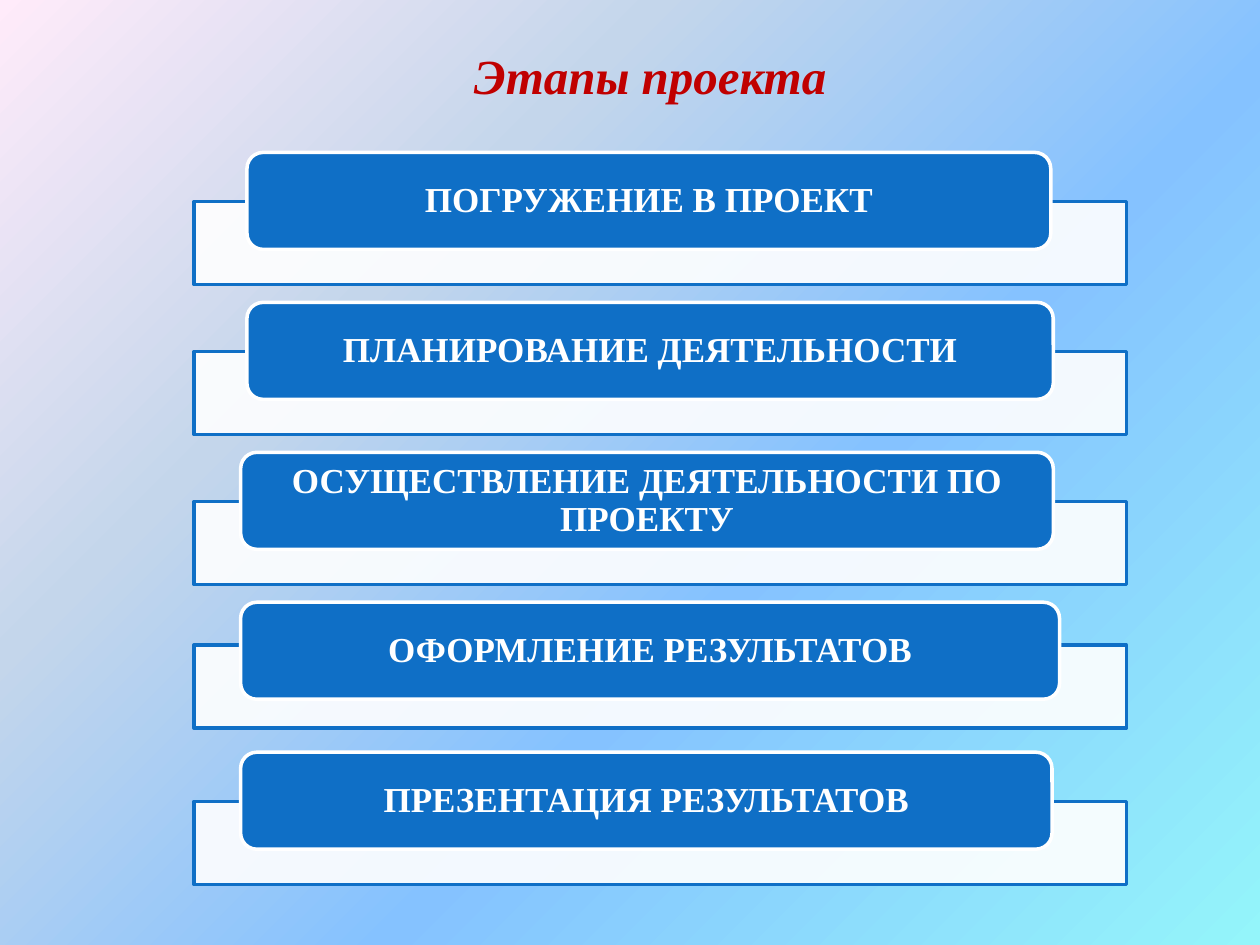
"""Build the slide that lists the five stages of a project."""
import pptx
import pptx.dml.color
import pptx.enum.shapes
import pptx.enum.text
import pptx.oxml
import pptx.oxml.ns
import pptx.util
from pptx.util import Inches

SHAPE = pptx.enum.shapes.MSO_SHAPE
ANCHOR = pptx.enum.text.MSO_ANCHOR


def rgb(value):
    return pptx.dml.color.RGBColor.from_string(value)


class Deck:
    font = "Times New Roman"
    blue = "0F6FC6"
    white = "FFFFFF"
    red = "C00000"

    def __init__(self):
        self.prs = pptx.Presentation()
        self.prs.slide_width = Inches(10)
        self.prs.slide_height = Inches(7.5)
        self.s = self.prs.slides.add_slide(self.prs.slide_layouts[5])

    def background(self, stops):
        fill = self.s.background.fill
        fill.gradient()
        grad = self.s._element.find(".//" + pptx.oxml.ns.qn("a:gradFill"))
        marks = "".join(
            f'<a:gs pos="{pos * 1000}"><a:srgbClr val="{color}"/></a:gs>'
            for pos, color in stops
        )
        new = pptx.oxml.parse_xml(
            f'<a:gradFill {pptx.oxml.ns.nsdecls("a")} rotWithShape="1">'
            f'<a:gsLst>{marks}</a:gsLst><a:path path="circle">'
            '<a:fillToRect l="100000" t="100000"/></a:path></a:gradFill>'
        )
        grad.getparent().replace(grad, new)

    def text(self, tf, text, size, color, anchor, inset, italic=None):
        tf.word_wrap = True
        tf.vertical_anchor = anchor
        tf.margin_left = tf.margin_right = Inches(inset)
        p = tf.paragraphs[0]
        p.alignment = pptx.enum.text.PP_ALIGN.CENTER
        r = p.add_run()
        r.text = text
        r.font.name = self.font
        r.font.size = pptx.util.Pt(size)
        r.font.bold = True
        r.font.italic = italic
        r.font.color.rgb = rgb(color)
        return p

    def title(self, text, left, top, width, height):
        sp = self.s.shapes.title
        sp.left, sp.top = Inches(left), Inches(top)
        sp.width, sp.height = Inches(width), Inches(height)
        self.text(sp.text_frame, text, 28, self.red, ANCHOR.TOP, 0.1, True)
        sp.text_frame.auto_size = pptx.enum.text.MSO_AUTO_SIZE.SHAPE_TO_FIT_TEXT

    def box(self, kind, left, top, width, height, fill, line):
        sp = self.s.shapes.add_shape(
            kind, Inches(left), Inches(top), Inches(width), Inches(height))
        sp.shadow.inherit = False
        sp.fill.solid()
        sp.fill.fore_color.rgb = rgb(fill)
        sp.line.color.rgb = rgb(line)
        sp.line.width = pptx.util.Pt(2)
        return sp

    def frame(self, top):
        sp = self.box(SHAPE.RECTANGLE, 1.54, top, 7.4, 0.66, self.white, self.blue)
        color = sp._element.spPr.find(
            pptx.oxml.ns.qn("a:solidFill")).find(pptx.oxml.ns.qn("a:srgbClr"))
        color.append(pptx.oxml.parse_xml(
            f'<a:alpha {pptx.oxml.ns.nsdecls("a")} val="90000"/>'))

    def label(self, text, left, top, width):
        sp = self.box(SHAPE.ROUNDED_RECTANGLE, left, top, width, 0.77,
                      self.blue, self.white)
        tf = sp.text_frame
        tf.margin_top = tf.margin_bottom = 0
        p = self.text(tf, text, 20, self.white, ANCHOR.MIDDLE, 0.24)
        p.line_spacing = 0.9


def main():
    deck = Deck()
    deck.background([(0, "94F5FA"), (40, "85C2FF"), (70, "C4D6EB"), (100, "FFEBFA")])
    deck.title("Этапы проекта", 0.55, 0.31, 9.22, 0.57)
    stages = [
        ("ПОГРУЖЕНИЕ В ПРОЕКТ", 1.6, 1.96, 6.38),
        ("ПЛАНИРОВАНИЕ ДЕЯТЕЛЬНОСТИ", 2.79, 1.96, 6.4),
        ("ОСУЩЕСТВЛЕНИЕ ДЕЯТЕЛЬНОСТИ ПО ПРОЕКТУ", 3.98, 1.91, 6.45),
        ("ОФОРМЛЕНИЕ РЕЗУЛЬТАТОВ", 5.12, 1.91, 6.5),
        ("ПРЕЗЕНТАЦИЯ РЕЗУЛЬТАТОВ", 6.36, 1.91, 6.44),
    ]
    for i, (text, frame_top, left, width) in enumerate(stages):
        deck.frame(frame_top)
        deck.label(text, left, 1.21 + 1.19 * i, width)
    deck.prs.save("out.pptx")


if __name__ == "__main__":
    main()
